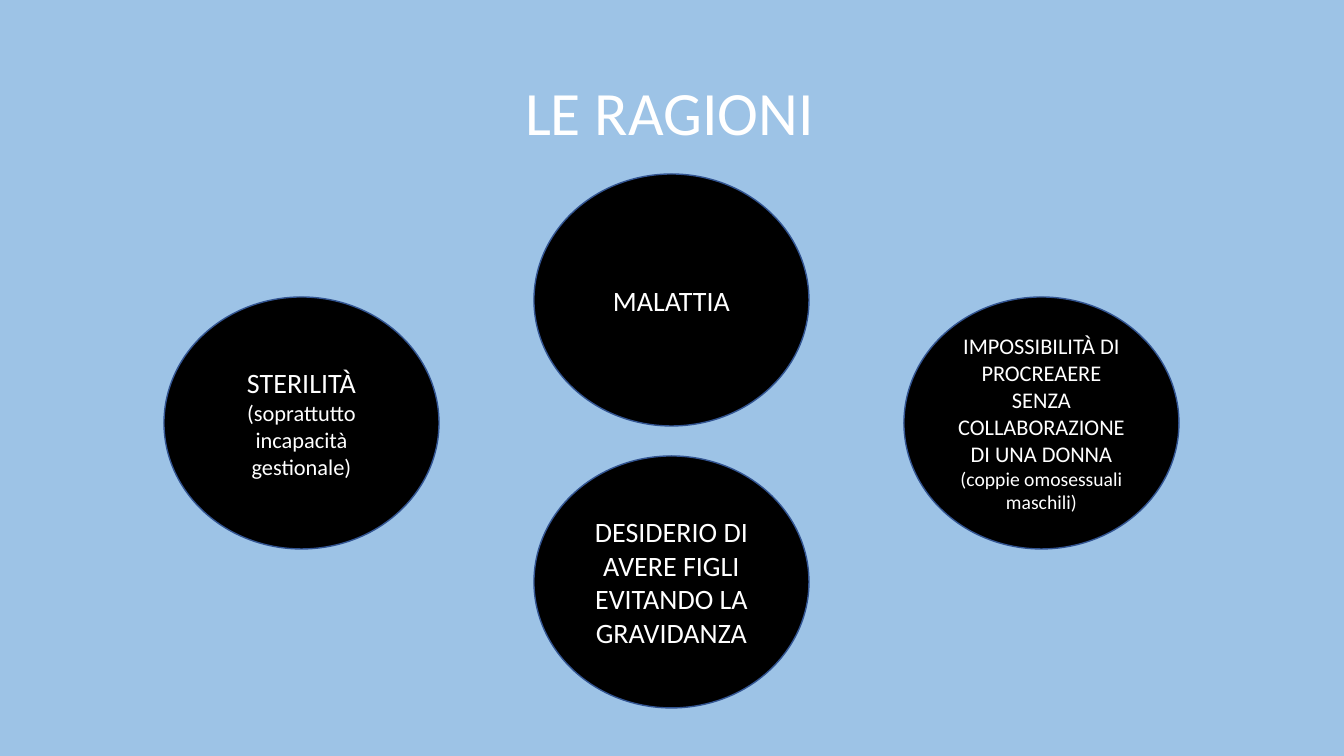
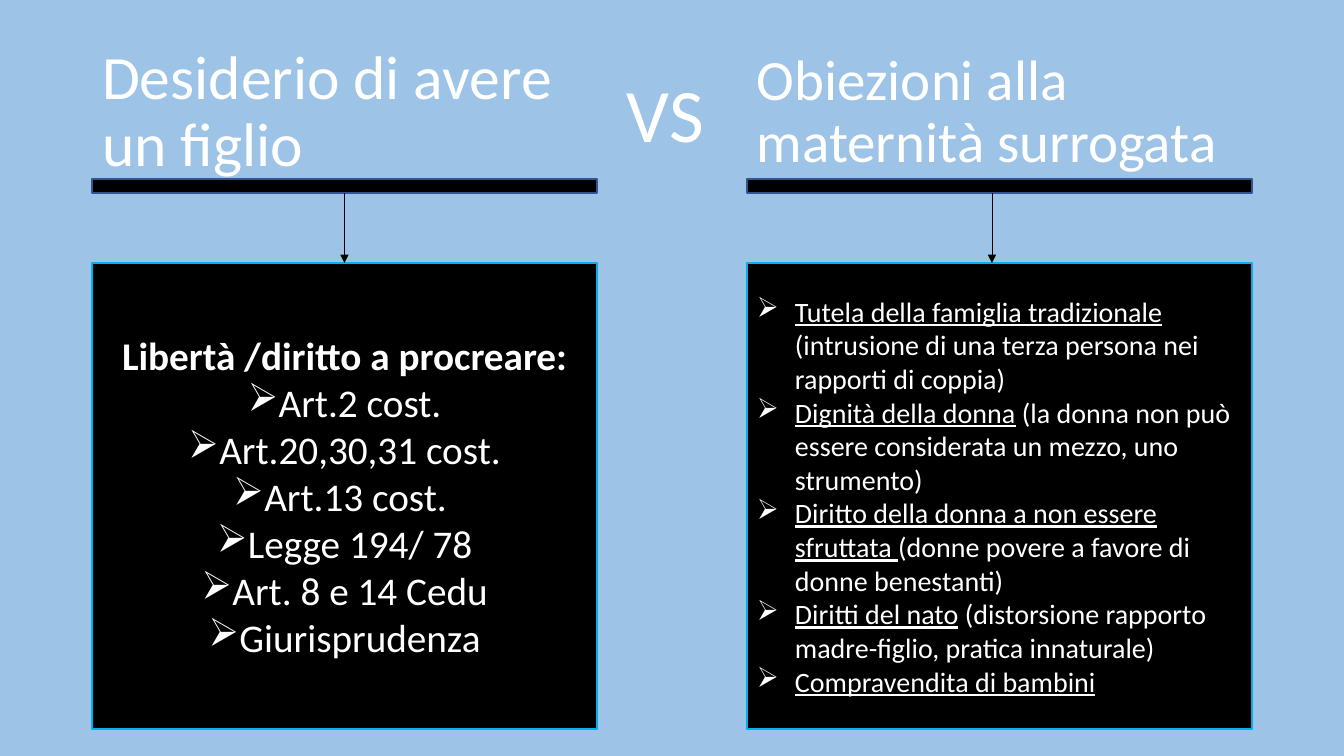
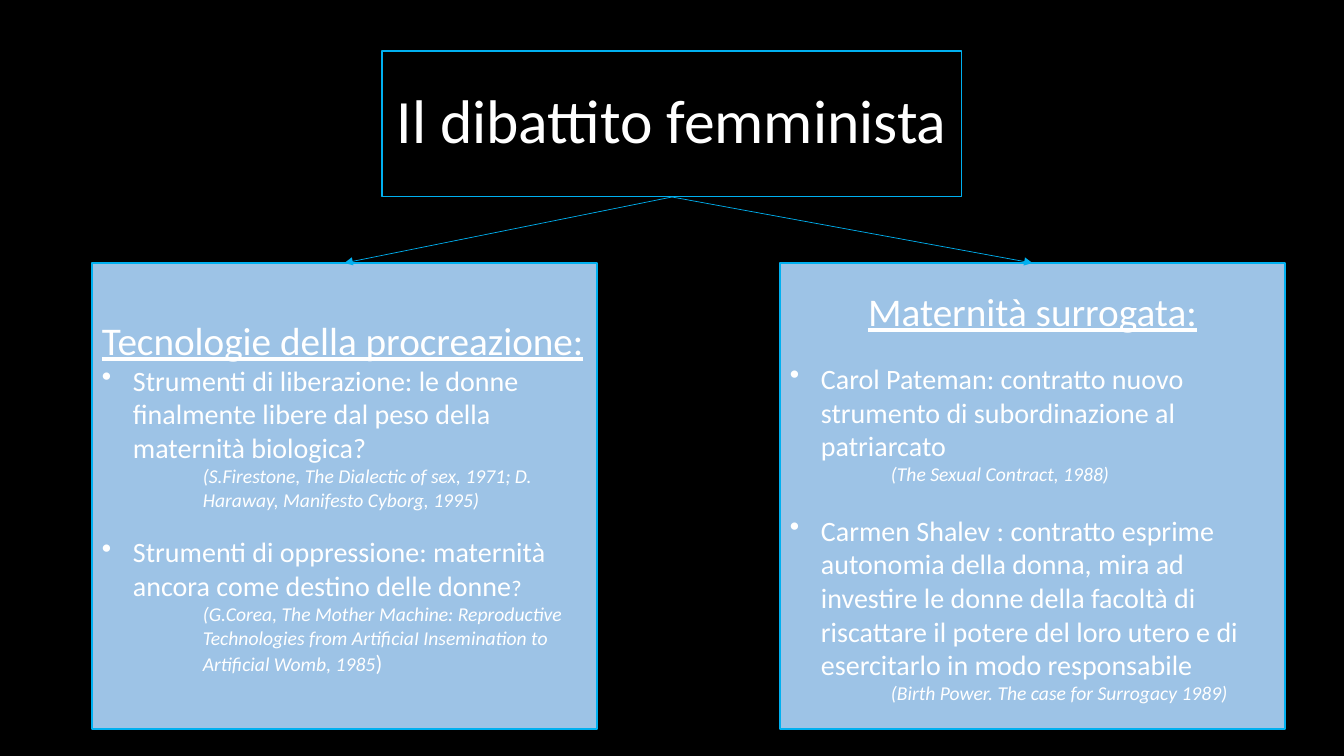
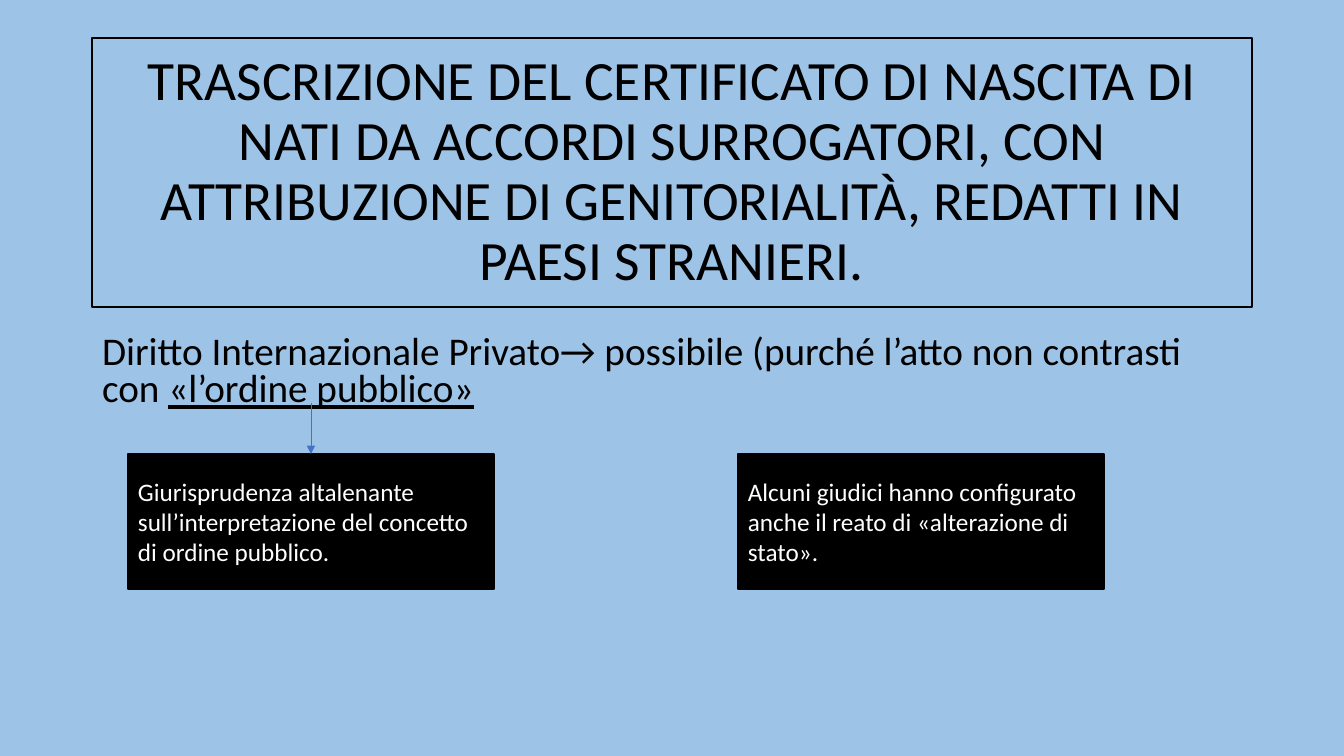
from dataclasses import dataclass

from lxml import etree
from pptx import Presentation, util as u
from pptx.dml.color import RGBColor
from pptx.enum import shapes, text
from pptx.oxml import ns

SKY, BLACK, WHITE = "9DC3E6", "000000", "FFFFFF"
NAVY, CYAN, BLUE = "325491", "00B0F0", "4472C4"
FONT = "Calibri"
RECT, OVAL = shapes.MSO_SHAPE.RECTANGLE, shapes.MSO_SHAPE.OVAL
LEFT, CENTER = text.PP_ALIGN.LEFT, text.PP_ALIGN.CENTER
TITLE_ONLY, TITLE_BODY = 5, 1
TOP, BOTTOM = 0, 2


def px(n):
    """Turn pixels (100.8 to the inch) into EMU."""
    return u.Emu(round(n * 914400 / 100.8))


def color(code):
    return RGBColor.from_string(code)


def add_tag(parent, tag, **attrs):
    return etree.SubElement(parent, ns.qn(tag), **attrs)


@dataclass
class Para:
    """One paragraph: runs are (text, size, style), style letters are b, i, u."""
    runs: list
    align: int = LEFT
    mark: str = ""
    left: int = 0
    hang: int = 0
    before: float = 0
    lines: float = 1.0
    level: int = 0


class Deck:
    """Holds the shared style and the current slide."""

    def __init__(self):
        self.prs = Presentation()
        self.prs.slide_width, self.prs.slide_height = px(1344), px(756)
        self.slide = None

    def page(self, back=SKY, layout=TITLE_ONLY):
        self.slide = self.prs.slides.add_slide(self.prs.slide_layouts[layout])
        fill = self.slide.background.fill
        fill.solid()
        fill.fore_color.rgb = color(back)

    def set_text(self, shape, paras, ink=WHITE, anchor=text.MSO_ANCHOR.MIDDLE):
        frame = shape.text_frame
        frame.word_wrap = True
        frame.auto_size = text.MSO_AUTO_SIZE.NONE
        frame.vertical_anchor = anchor
        for i, para in enumerate(paras):
            p = frame.add_paragraph() if i else frame.paragraphs[0]
            p.alignment, p.level = para.align, para.level
            p.line_spacing = para.lines
            p.space_before, p.space_after = u.Pt(para.before), u.Pt(0)
            props = p._p.get_or_add_pPr()
            props.set("marL", str(px(para.left)))
            props.set("indent", str(px(-para.hang)))
            if para.mark:
                add_tag(props, "a:buChar", char=para.mark)
            else:
                add_tag(props, "a:buNone")
            for words, size, style in para.runs:
                run = p.add_run()
                run.text = words
                font = run.font
                font.name, font.size = FONT, u.Pt(size)
                font.color.rgb = color(ink)
                font.bold, font.italic = "b" in style, "i" in style
                font.underline = "u" in style

    def place(self, shape, box):
        shape.left, shape.top, shape.width, shape.height = map(px, box)

    def edge(self, shape, code, width):
        shape.line.color.rgb = color(code)
        shape.line.width = u.Pt(width)

    def title(self, box, words, size=44, align=LEFT, ink=WHITE, line=None):
        shape = self.slide.shapes.title
        self.place(shape, box)
        self.set_text(shape, [Para([(words, size, "")], align, lines=0.9)], ink)
        if line:
            self.edge(shape, *line)
        return shape

    def body(self, box, paras, ink):
        shape = self.slide.placeholders[1]
        self.place(shape, box)
        self.set_text(shape, paras, ink, text.MSO_ANCHOR.TOP)

    def label(self, box, para, anchor=text.MSO_ANCHOR.MIDDLE):
        shape = self.slide.shapes.add_textbox(*map(px, box))
        self.set_text(shape, [para], anchor=anchor)
        return shape

    def block(self, box, paras=(), kind=RECT, fill=BLACK, line=NAVY):
        shape = self.slide.shapes.add_shape(kind, *map(px, box))
        shape.shadow.inherit = False
        shape.fill.solid()
        shape.fill.fore_color.rgb = color(fill)
        self.edge(shape, line, 1)
        self.set_text(shape, paras)
        return shape

    def arrow(self, start, end, code, source=None, target=None):
        """Draw an arrow, joined to the bottom of source and the top of target."""
        line = self.slide.shapes.add_connector(
            shapes.MSO_CONNECTOR.STRAIGHT, *map(px, start + end))
        if source:
            line.begin_connect(source, BOTTOM)
        if target:
            line.end_connect(target, TOP)
        self.edge(line, code, 0.5)
        add_tag(line.get_or_add_ln(), "a:tailEnd", type="triangle")
        add_tag(line.element.spPr, "a:effectLst")


def reasons(deck):
    deck.page()
    deck.title((515, 43, 314, 146), "LE RAGIONI")
    circles = [
        (0, 297, [("STERILITÀ ", 20, ""),
                  ("(soprattutto incapacità gestionale)", 16, "")]),
        (1, 174, [("MALATTIA", 20, "")]),
        (1, 456, [("DESIDERIO DI AVERE FIGLI EVITANDO LA GRAVIDANZA", 20, "")]),
        (2, 297, [("IMPOSSIBILITÀ DI PROCREAERE SENZA COLLABORAZIONE "
                   "DI UNA DONNA ", 16, ""),
                  ("(coppie omosessuali maschili)", 14, "")]),
    ]
    for col, top, runs in circles:
        deck.block((164 + 370 * col, top, 275, 252), [Para(runs, CENTER)], OVAL)


def versus(deck):
    deck.page()
    deck.title((92, 40, 491, 146), "Desiderio di avere un figlio")
    deck.label((747, 40, 505, 146),
               Para([("Obiezioni alla maternità surrogata", 40.7, "")], lines=0.9))
    vs = deck.label((617, 62, 111, 102), Para([("VS", 54, "")]),
                    text.MSO_ANCHOR.TOP)
    vs.text_frame.auto_size = text.MSO_AUTO_SIZE.SHAPE_TO_FIT_TEXT

    laws = ["Art.2 cost.", "Art.20,30,31 cost.", "Art.13 cost. ",
            "Legge 194/ 78", "Art. 8 e 14 Cedu", "Giurisprudenza"]
    rights = [Para([("Libertà /diritto a procreare:", 28, "b")], CENTER)]
    rights += [Para([(law, 28, "")], CENTER, "➢", 31, 31) for law in laws]
    claims = [
        ("Tutela della famiglia tradizionale ",
         "(intrusione di una terza persona nei rapporti di coppia)"),
        ("Dignità della donna",
         " (la donna non può essere considerata un mezzo, uno strumento)"),
        ("Diritto della donna a non essere sfruttata ",
         "(donne povere a favore di donne benestanti)"),
        ("Diritti del nato",
         " (distorsione rapporto madre-figlio, pratica innaturale)"),
        ("Compravendita di bambini", ""),
    ]
    doubts = [Para([(words, 20, style) for words, style in ((head, "u"), (rest, ""))
                    if words], mark="➢", left=38, hang=38)
              for head, rest in claims]

    for left, mid, paras in ((92, 345, rights), (747, 992, doubts)):
        bar = deck.block((left, 179, 505, 14))
        card = deck.block((left, 263, 505, 466), paras, line=CYAN)
        joined = abs(left + 505 / 2 - mid) < 1
        deck.arrow((mid, 193), (mid, 263), BLACK,
                   bar if joined else None, card if joined else None)


def debate(deck):
    def point(*runs, before=0):
        return Para(list(runs), mark="•", left=31, hang=31, before=before)

    def cite(*runs):
        return Para(list(runs), left=101, level=1)

    deck.page(BLACK)
    head = deck.title((382, 51, 580, 146), "Il dibattito femminista",
                      align=CENTER, line=(CYAN, 0.75))
    methods = [
        Para([("Tecnologie della procreazione:", 28, "u")]),
        point(("Strumenti di liberazione: le donne finalmente libere dal peso "
               "della maternità biologica?", 20, "")),
        cite(("(S.Firestone, The Dialectic of sex, 1971; D. Haraway, "
              "Manifesto Cyborg, 1995)", 14, "i")),
        point(("Strumenti di oppressione: maternità ancora come destino "
               "delle donne", 20, ""), ("?", 16, ""), before=17),
        cite(("(G.Corea, The Mother Machine: Reproductive Technologies from "
              "ArtificiaI Insemination to Artificial Womb, 1985", 14, "i"),
             (")", 16, "")),
    ]
    authors = [
        Para([("Maternità surrogata:", 28, "u")], CENTER),
        point(("Carol Pateman: contratto nuovo strumento di subordinazione "
               "al patriarcato", 20, ""), before=19.5),
        cite(("(The Sexual Contract, 1988)", 14, "i")),
        point(("Carmen Shalev : contratto esprime autonomia della donna, mira "
               "ad investire le donne della facoltà di riscattare il potere "
               "del loro utero e di esercitarlo in modo responsabile", 20, ""),
              before=19.5),
        cite(("(Birth Power. The case for Surrogacy 1989)", 14, "i")),
    ]
    for left, paras in ((92, methods), (780, authors)):
        card = deck.block((left, 263, 505, 466), paras, fill=SKY, line=CYAN)
        deck.arrow((672, 197), (left + 252, 263), CYAN, head, card)


def records(deck):
    deck.page(layout=TITLE_BODY)
    deck.title((92, 38, 1160, 269),
               "TRASCRIZIONE DEL CERTIFICATO DI NASCITA DI NATI DA ACCORDI "
               "SURROGATORI, CON ATTRIBUZIONE DI GENITORIALITÀ, REDATTI IN "
               "PAESI STRANIERI.", 39.6, CENTER, BLACK, (BLACK, 2))
    deck.body((92, 330, 1160, 93), [Para([
        ("Diritto Internazionale Privato→ possibile (purché l’atto non "
         "contrasti con ", 28, ""),
        ("«l’ordine pubblico»", 28, "u")], before=10, lines=0.8)], BLACK)
    notes = [
        (128, ["Giurisprudenza altalenante sull’interpretazione del concetto "
               "di ordine pubblico."]),
        (738, ["Alcuni giudici hanno configurato anche il reato di "
               "«alterazione di", "stato»."]),
    ]
    cards = [deck.block((left, 454, 366, 135),
                        [Para([(words, 18, "")]) for words in rows], line=BLACK)
             for left, rows in notes]
    deck.arrow((311, 403), (311, 454), BLUE, target=cards[0])


def main():
    deck = Deck()
    for build in (reasons, versus, debate, records):
        build(deck)
    deck.prs.save("out.pptx")


if __name__ == "__main__":
    main()
